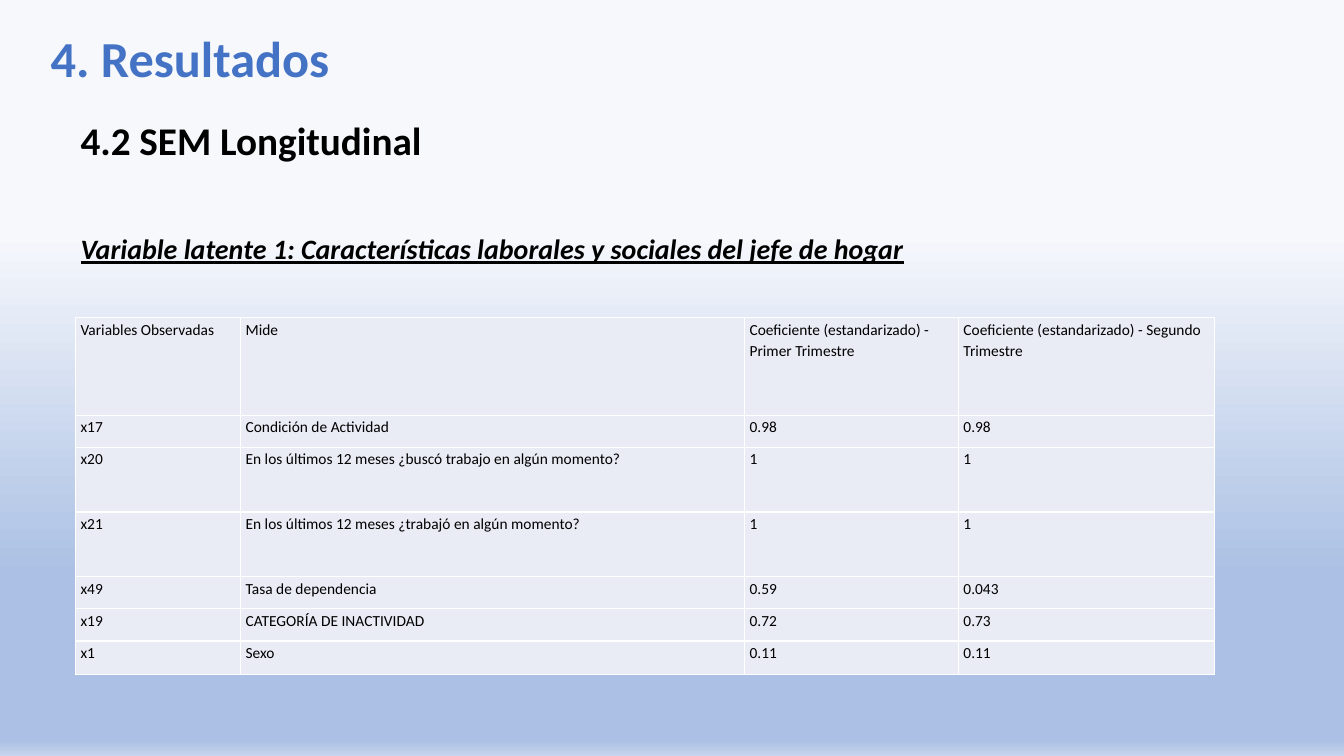
from pptx import Presentation
from pptx import util as u
from pptx.dml.color import RGBColor
from pptx.enum import text
from pptx.oxml.ns import qn
from lxml import etree

HEADERS = ("Variables Observadas", "Mide",
           "Coeficiente (estandarizado) - Primer Trimestre",
           "Coeficiente (estandarizado) - Segundo Trimestre")
VARIABLES = [
    ("x17", "Condición de Actividad", "0.98", "0.98"),
    ("x20", "En los últimos 12 meses ¿buscó trabajo en algún momento?", "1", "1"),
    ("x21", "En los últimos 12 meses ¿trabajó en algún momento?", "1", "1"),
    ("x49", "Tasa de dependencia", "0.59", "0.043"),
    ("x19", "CATEGORÍA DE INACTIVIDAD", "0.72", "0.73"),
    ("x1", "Sexo", "0.11", "0.11"),
]
COLUMN_WIDTHS = (4.16, 12.7, 5.39, 6.45)
ROW_HEIGHTS = (2.46, 0.81, 1.63, 1.63, 0.81, 0.81, 0.84)


def color(value):
    return RGBColor.from_string(value)


def add_fill(parent, value):
    fill = etree.SubElement(parent, qn("a:solidFill"))
    etree.SubElement(fill, qn("a:srgbClr"), val=value)


class SlideBuilder:
    font = "Calibri"
    black, blue, white, pale = "000000", "4472C4", "FFFFFF", "E9EBF5"

    def __init__(self, page):
        self.page = page

    def background(self, stops):
        self.page.background.fill.gradient()
        gradient = self.page.element.find(".//" + qn("a:gradFill"))
        for child in list(gradient):
            gradient.remove(child)
        stop_list = etree.SubElement(gradient, qn("a:gsLst"))
        for percent, value in stops:
            stop = etree.SubElement(stop_list, qn("a:gs"), pos=str(percent * 1000))
            etree.SubElement(stop, qn("a:srgbClr"), val=value)
        etree.SubElement(gradient, qn("a:lin"), ang="5400000", scaled="0")

    def style(self, para, size, value, spacing, bold=False):
        para.line_spacing = spacing
        para.font.name = self.font
        para.font.size = u.Pt(size)
        para.font.bold = bold
        para.font.color.rgb = color(value)

    def title(self, words, left, top, width, height):
        box = self.page.shapes.title
        box.left, box.top, box.width, box.height = map(u.Cm, (left, top, width, height))
        frame = box.text_frame
        frame.text = words
        frame.auto_size = text.MSO_AUTO_SIZE.NONE
        frame.vertical_anchor = text.MSO_ANCHOR.MIDDLE
        frame.margin_bottom = u.Cm(1.52)  # lifts the line above the subtitle
        para = frame.paragraphs[0]
        para.alignment = text.PP_ALIGN.LEFT
        self.style(para, 36, self.blue, 0.9, bold=True)

    def headings(self, section, topic, left, top, width, height):
        box = self.page.shapes.add_textbox(*map(u.Cm, (left, top, width, height)))
        frame = box.text_frame
        frame.word_wrap = True
        frame.text = f"{section}\n{topic}"
        for para, size, after in zip(frame.paragraphs, (28, 20), (45, 10)):
            self.style(para, size, self.black, 1.15, bold=True)
            para.alignment = text.PP_ALIGN.JUSTIFY
            para.space_after = u.Pt(after)
            para._p.get_or_add_pPr().set("marL", str(u.Cm(0.76)))
        topic_font = frame.paragraphs[1].font
        topic_font.italic = topic_font.underline = True

    def cell(self, cell, words):
        properties = cell._tc.get_or_add_tcPr()
        for side in ("L", "R", "T", "B"):
            border = etree.SubElement(properties, qn("a:ln" + side), w=str(u.Pt(1)))
            add_fill(border, self.white)
        cell.fill.solid()
        cell.fill.fore_color.rgb = color(self.pale)
        cell.margin_left = cell.margin_right = u.Cm(0.13)
        cell.margin_top = cell.margin_bottom = 0
        cell.text = words
        self.style(cell.text_frame.paragraphs[0], 11, self.black, 1.15)

    def table(self, rows, widths, heights, left, top):
        area = map(u.Cm, (left, top, sum(widths), sum(heights)))
        table = self.page.shapes.add_table(len(rows), len(widths), *area).table
        table.first_row = table.horz_banding = False
        for column, width in zip(table.columns, widths):
            column.width = u.Cm(width)
        for row, height, values in zip(table.rows, heights, rows):
            row.height = u.Cm(height)
            for cell, words in zip(row.cells, values):
                self.cell(cell, words)


def main():
    deck = Presentation()
    deck.slide_width, deck.slide_height = u.Cm(33.87), u.Cm(19.05)
    page = deck.slides.add_slide(deck.slide_layouts.get_by_name("Title Only"))
    builder = SlideBuilder(page)

    # Background and headings
    builder.background([(31, "F6F8FC"), (76, "ABC0E4"), (98, "ABC0E4"), (100, "C7D5ED")])
    builder.title("4. Resultados", 1.02, 1.17, 29.21, 2.16)
    builder.headings("4.2 SEM Longitudinal",
                     "Variable latente 1: Características laborales y sociales del jefe de hogar",
                     1.02, 2.64, 31.8, 5.87)

    # Coefficients of the observed variables
    builder.table([HEADERS, *VARIABLES], COLUMN_WIDTHS, ROW_HEIGHTS, 1.9, 8)

    deck.save("out.pptx")


if __name__ == "__main__":
    main()
